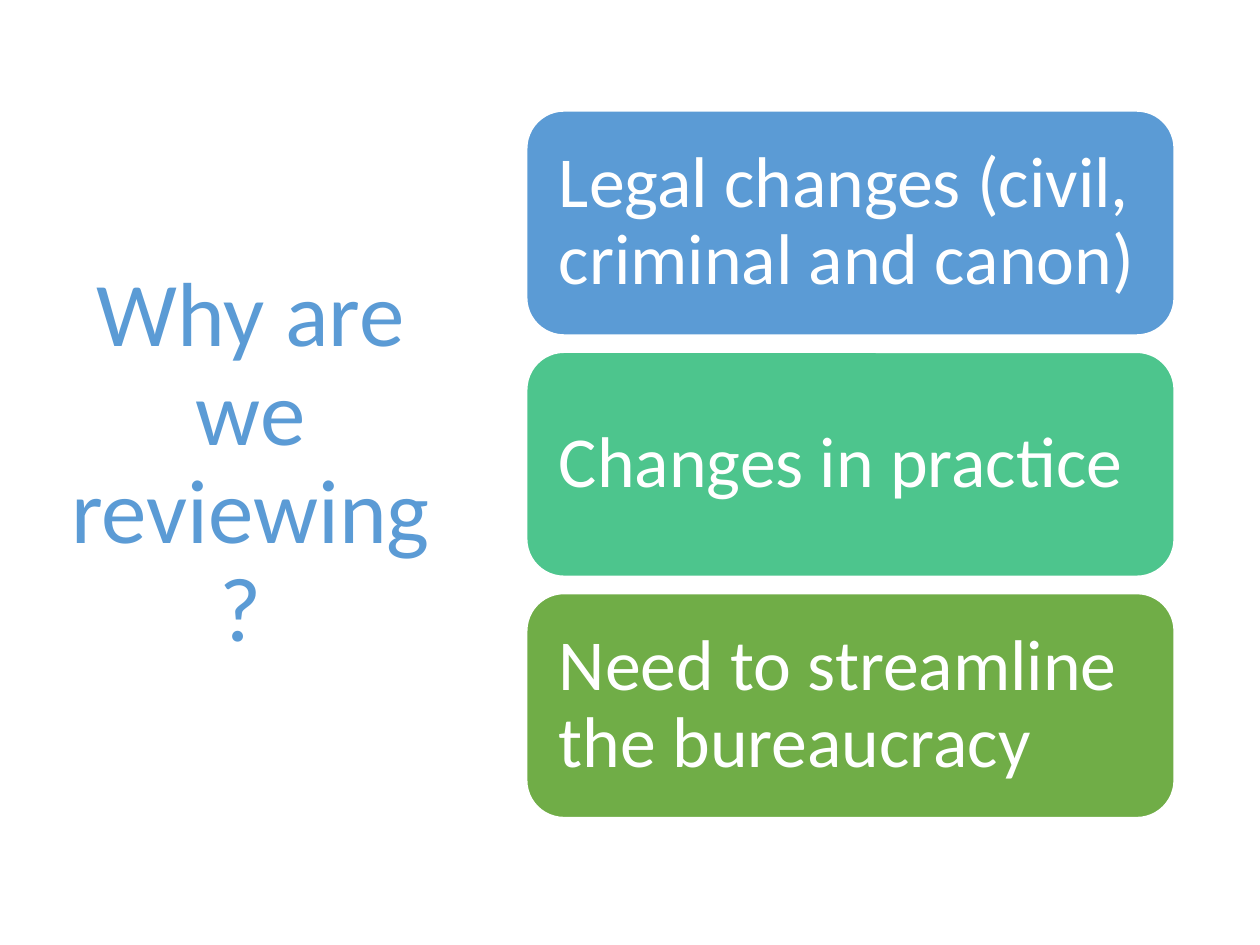
"""Build a slide with a title question beside three stacked reason cards."""
import pptx
import pptx.util
import pptx.dml.color
import pptx.enum.shapes
import pptx.enum.text

Inches = pptx.util.Inches

COLOURS = {"blue": "5B9BD5", "teal": "4DC58D", "green": "70AD47", "white": "FFFFFF"}
TITLE = "Why are we reviewing? "
REASONS = [
    ("Legal changes (civil, criminal and canon)", "blue"),
    ("Changes in practice", "teal"),
    ("Need to streamline the bureaucracy", "green"),
]
CARD_LEFT, CARD_TOP, CARD_WIDTH, CARD_HEIGHT = 4.18, 0.88, 5.14, 1.78
CARD_PITCH = 1.915
CARD_INSET = 0.17


def colour(name):
    """Return the named colour."""
    return pptx.dml.color.RGBColor.from_string(COLOURS[name])


def write(shape, text, size, colour_name, alignment):
    """Write one formatted paragraph, centred vertically, and return it."""
    frame = shape.text_frame
    frame.text = text
    frame.word_wrap = True
    frame.auto_size = pptx.enum.text.MSO_AUTO_SIZE.NONE
    frame.vertical_anchor = pptx.enum.text.MSO_ANCHOR.MIDDLE
    paragraph = frame.paragraphs[0]
    paragraph.alignment = alignment
    paragraph.line_spacing = 0.9
    font = paragraph.runs[0].font
    font.name = "Calibri"
    font.size = pptx.util.Pt(size)
    font.color.rgb = colour(colour_name)
    return paragraph


def add_title(slide):
    """Place the question in the title placeholder."""
    title = slide.shapes.title
    title.left, title.top = Inches(0.43), Inches(0.68)
    title.width, title.height = Inches(3.12), Inches(6.02)
    paragraph = write(title, TITLE, 52, "blue", pptx.enum.text.PP_ALIGN.CENTER)
    paragraph.space_before = pptx.util.Pt(0)
    paragraph.space_after = pptx.util.Pt(6)


def add_card(slide, index, text, fill):
    """Add one rounded reason card at its place in the stack."""
    card = slide.shapes.add_shape(
        pptx.enum.shapes.MSO_SHAPE.ROUNDED_RECTANGLE,
        Inches(CARD_LEFT), Inches(CARD_TOP + index * CARD_PITCH),
        Inches(CARD_WIDTH), Inches(CARD_HEIGHT))
    card.shadow.inherit = False
    card.fill.solid()
    card.fill.fore_color.rgb = colour(fill)
    card.line.color.rgb = colour("white")
    card.line.width = pptx.util.Pt(1)
    frame = card.text_frame
    frame.margin_left = frame.margin_right = Inches(CARD_INSET)
    frame.margin_top = frame.margin_bottom = Inches(CARD_INSET)
    write(card, text, 41, "white", pptx.enum.text.PP_ALIGN.LEFT)


def main():
    """Build and save the presentation."""
    presentation = pptx.Presentation()
    presentation.slide_width, presentation.slide_height = Inches(10), Inches(7.5)
    slide = presentation.slides.add_slide(presentation.slide_layouts[5])
    add_title(slide)
    for index, (text, fill) in enumerate(REASONS):
        add_card(slide, index, text, fill)
    presentation.save("out.pptx")


if __name__ == "__main__":
    main()
